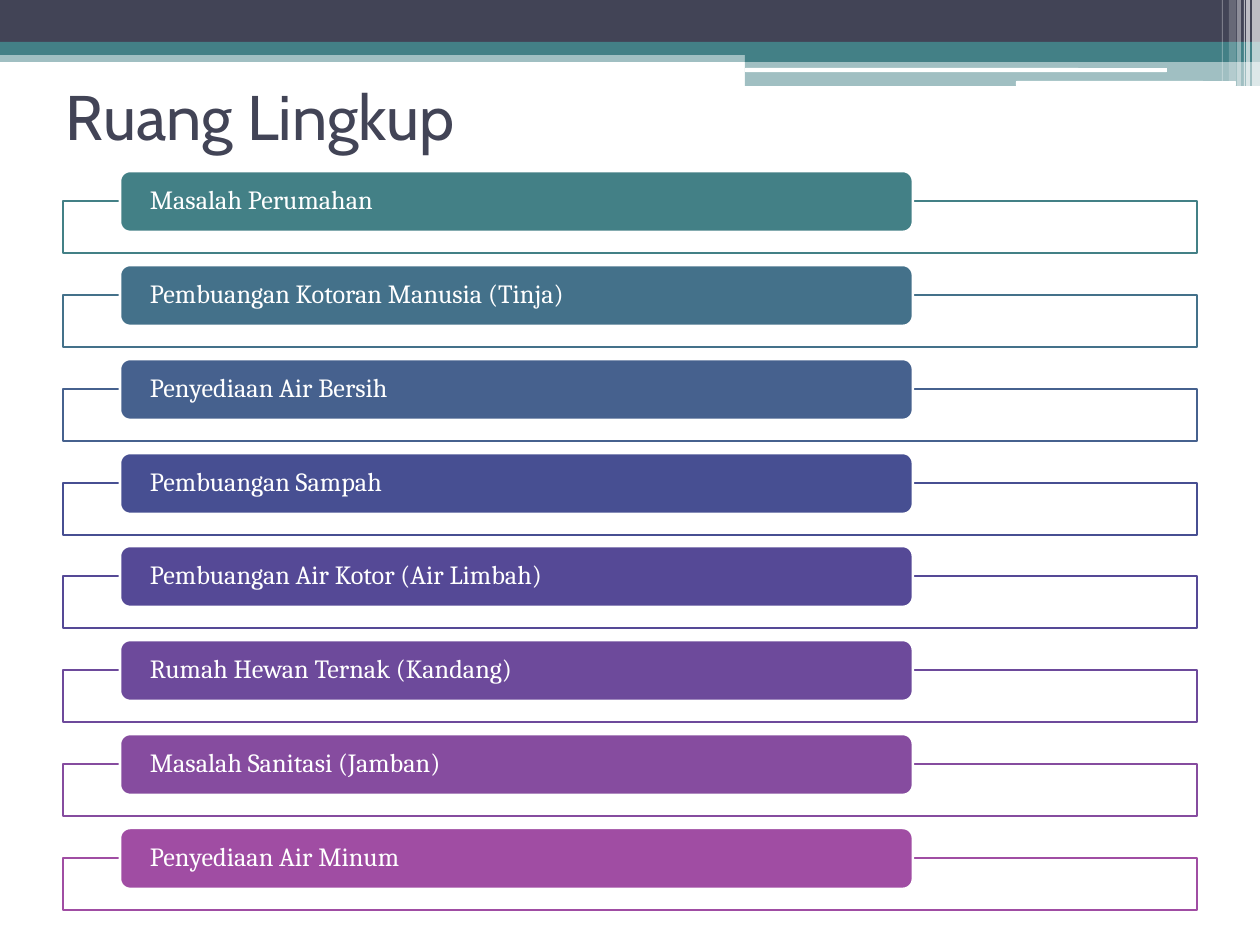
from lxml import etree
from pptx import Presentation
from pptx.dml.color import RGBColor
from pptx.enum.shapes import MSO_SHAPE
from pptx.enum.text import MSO_ANCHOR, PP_ALIGN
from pptx.oxml.ns import qn
from pptx.util import Pt

RECT, ROUND = MSO_SHAPE.RECTANGLE, MSO_SHAPE.ROUNDED_RECTANGLE
MIDDLE, LEFT = MSO_ANCHOR.MIDDLE, PP_ALIGN.LEFT
PX = 914400 / 126
WHITE, DARK, TEAL = "FFFFFF", "424456", "438086"

BANDS = [
    (RECT, 0, 50, 1260, 12, TEAL, 50),
    (RECT, 0, 0, 1260, 42, DARK, 100),
    (RECT, 0, 42, 1260, 13, TEAL, 100),
    (RECT, 745, 49, 515, 13, TEAL, 100),
    (RECT, 745, 61, 515, 25, TEAL, 50),
    (ROUND, 745, 68, 422, 4, WHITE, 100),
    (ROUND, 1016, 81, 220, 5, WHITE, 100),
]
STRIPES = [
    (1252, 8, 86, 65),
    (1246, 4, 86, 65),
    (1244, 1, 86, 60),
    (1237, 4, 86, 40),
    (1229, 7, 81, 20),
    (1222, 1, 81, 30),
]
TOPICS = [
    ("Masalah Perumahan", TEAL),
    ("Pembuangan Kotoran Manusia (Tinja)", "44718A"),
    ("Penyediaan Air Bersih", "46618E"),
    ("Pembuangan Sampah", "474F92"),
    ("Pembuangan Air Kotor (Air Limbah)", "554996"),
    ("Rumah Hewan Ternak (Kandang)", "6D4A9B"),
    ("Masalah Sanitasi (Jamban)", "864C9F"),
    ("Penyediaan Air Minum", "A04DA3"),
]
FIRST_TOP, LAST_TOP = 171, 828


def px(n):
    return round(n * PX)


def rgb(color):
    return RGBColor.from_string(color)


def set_attrs(obj, values):
    for name, value in values.items():
        setattr(obj, name, value)


def place(sp, x, y, w, h):
    set_attrs(sp, {"left": px(x), "top": px(y), "width": px(w), "height": px(h)})


def add_box(s, kind, x, y, w, h, fill, opacity=100, line=None):
    sp = s.shapes.add_shape(kind, px(x), px(y), px(w), px(h))
    sp.shadow.inherit = False
    sp.fill.solid()
    sp.fill.fore_color.rgb = rgb(fill)
    if opacity < 100:
        clr = sp.fill._xPr.find(qn("a:solidFill"))[0]
        etree.SubElement(clr, qn("a:alpha")).set("val", str(opacity * 1000))
    if line:
        sp.line.color.rgb = rgb(line)
        sp.line.width = Pt(1.5)
    else:
        sp.line.fill.background()
    return sp


def write(sp, text, font, size, color, inset_x, inset_y):
    tf = sp.text_frame
    set_attrs(tf, {
        "word_wrap": True, "vertical_anchor": MIDDLE,
        "margin_left": px(inset_x), "margin_right": px(inset_x),
        "margin_top": px(inset_y), "margin_bottom": px(inset_y),
    })
    p = tf.paragraphs[0]
    set_attrs(p, {"alignment": LEFT, "line_spacing": 0.9})
    r = p.add_run()
    r.text = text
    set_attrs(r.font, {"name": font, "size": Pt(size)})
    r.font.color.rgb = rgb(color)


def add_header(s):
    for band in BANDS:
        add_box(s, *band)
    for x, w, h, opacity in STRIPES:
        add_box(s, RECT, x, 0, w, h, WHITE, opacity)


def add_title(s, text):
    title = s.shapes.title
    place(title, 53, 73, 1134, 84)
    write(title, text, "Cabin", 36, DARK, 13, 6)
    title.text_frame.paragraphs[0].line_spacing = 1.0


def add_topic(s, top, text, color):
    add_box(s, RECT, 63, top + 30, 1134, 52, WHITE, 90, color)
    bar = add_box(s, ROUND, 120, top, 793, 61, color, line=WHITE)
    write(bar, text, "Cambria", 15, WHITE, 27, 0)


def main():
    prs = Presentation()
    set_attrs(prs, {"slide_width": px(1260), "slide_height": px(945)})
    s = prs.slides.add_slide(prs.slide_layouts[5])
    add_header(s)
    add_title(s, "Ruang Lingkup")
    pitch = (LAST_TOP - FIRST_TOP) / (len(TOPICS) - 1)
    for i, (text, color) in enumerate(TOPICS):
        add_topic(s, round(FIRST_TOP + i * pitch), text, color)
    prs.save("out.pptx")


if __name__ == "__main__":
    main()
